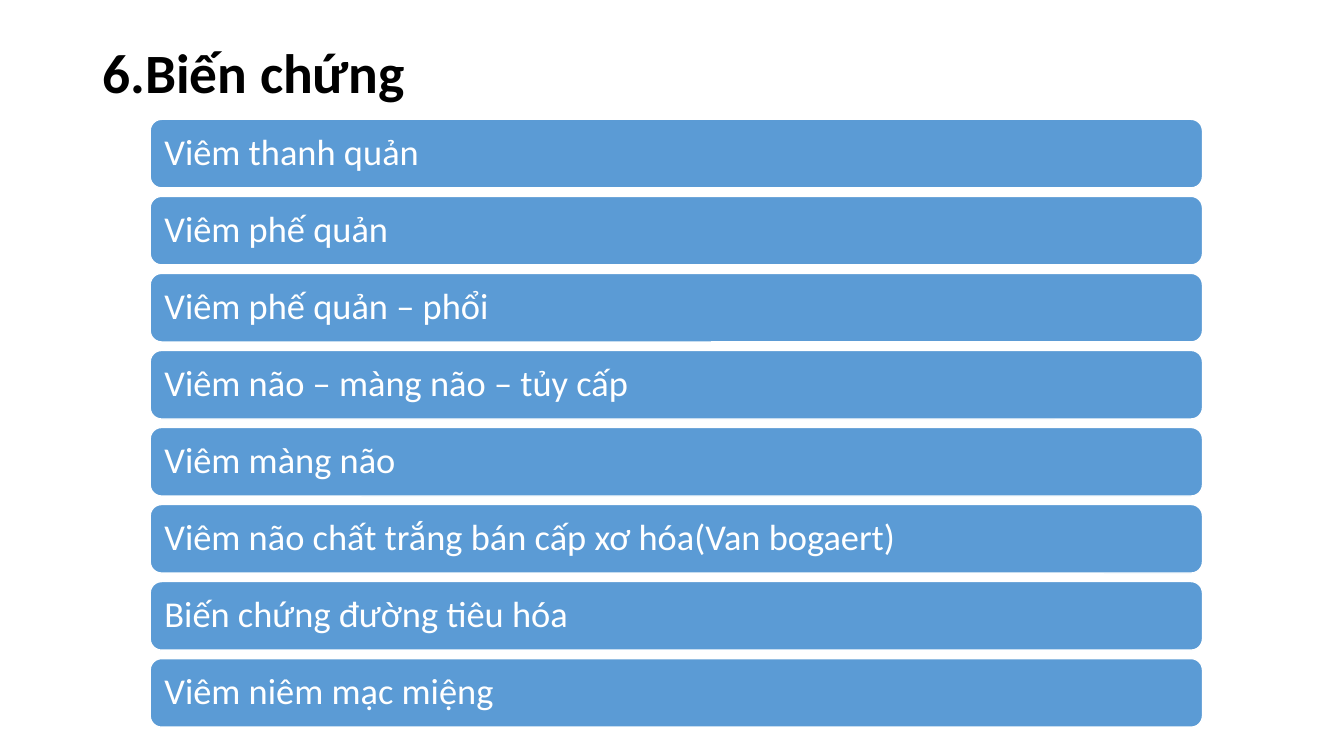
"""Build the slide listing complications as a stack of rounded bars."""
from dataclasses import dataclass

from pptx import Presentation
from pptx import util as u
from pptx.dml.color import RGBColor
from pptx.enum import shapes, text


@dataclass(frozen=True)
class Theme:
    font: str = "Calibri"
    title_size: float = 39.6
    bar_size: float = 26
    black: RGBColor = RGBColor(0, 0, 0)
    white: RGBColor = RGBColor(255, 255, 255)
    blue: RGBColor = RGBColor(0x5B, 0x9B, 0xD5)


def apply_format(target, values):
    for name, value in values.items():
        setattr(target, name, value)


def write_text(shape, wording, font_format, frame_format):
    frame = shape.text_frame
    apply_format(frame, frame_format)
    paragraph = frame.paragraphs[0]
    apply_format(paragraph, {"alignment": text.PP_ALIGN.LEFT, "line_spacing": 0.9})
    run = paragraph.add_run()
    run.text = wording
    apply_format(run.font, {"name": theme.font, **font_format})
    run.font.color.rgb = theme.white if shape.shape_type == shapes.MSO_SHAPE_TYPE.AUTO_SHAPE else theme.black


theme = Theme()
complications = [
    "Viêm thanh quản",
    "Viêm phế quản",
    "Viêm phế quản – phổi",
    "Viêm não – màng não – tủy cấp",
    "Viêm màng não",
    "Viêm não chất trắng bán cấp xơ hóa(Van bogaert)",
    "Biến chứng đường tiêu hóa",
    "Viêm niêm mạc miệng",
]
bar_left, bar_top, bar_width, bar_height, bar_pitch = 107.3, 85.2, 751.7, 49, 55.03
middle = {
    "vertical_anchor": text.MSO_ANCHOR.MIDDLE,
    "word_wrap": True,
    "auto_size": text.MSO_AUTO_SIZE.NONE,
}
bar_frame = {**middle, "margin_left": u.Pt(7.8), "margin_right": u.Pt(7.8)}

presentation = Presentation()
apply_format(presentation, {"slide_width": u.Pt(960), "slide_height": u.Pt(540)})
slide = presentation.slides.add_slide(presentation.slide_layouts[5])

title = slide.shapes.title
apply_format(title, {"left": u.Pt(66), "top": u.Pt(28.8), "width": u.Pt(828), "height": u.Pt(49.7)})
write_text(title, "6.Biến chứng", {"size": u.Pt(theme.title_size), "bold": True}, middle)

for index, complication in enumerate(complications):
    bar = slide.shapes.add_shape(
        shapes.MSO_SHAPE.ROUNDED_RECTANGLE,
        u.Pt(bar_left), u.Pt(bar_top + index * bar_pitch), u.Pt(bar_width), u.Pt(bar_height),
    )
    bar.shadow.inherit = False
    bar.fill.solid()
    bar.fill.fore_color.rgb = theme.blue
    bar.line.color.rgb = theme.white
    bar.line.width = u.Pt(1)
    write_text(bar, complication, {"size": u.Pt(theme.bar_size)}, bar_frame)

presentation.save("out.pptx")
